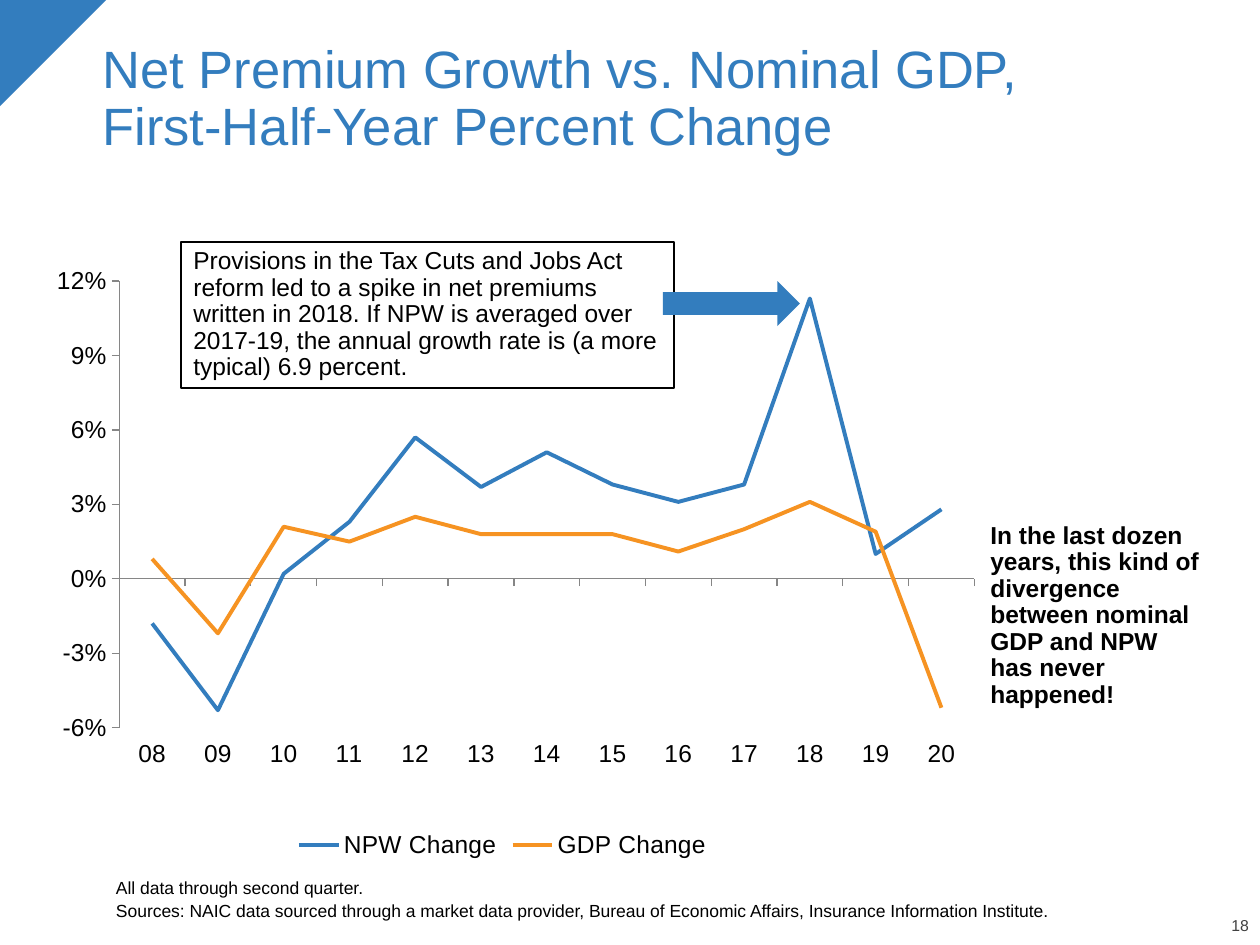
from dataclasses import dataclass

from lxml import etree
from pptx import Presentation
from pptx.chart.data import CategoryChartData
from pptx.dml.color import RGBColor
from pptx.enum.chart import XL_CHART_TYPE, XL_LEGEND_POSITION, XL_TICK_LABEL_POSITION, XL_TICK_MARK
from pptx.enum.shapes import MSO_SHAPE
from pptx.enum.text import MSO_ANCHOR, MSO_AUTO_SIZE, PP_ALIGN
from pptx.oxml import parse_xml
from pptx.oxml.ns import nsdecls, qn
from pptx.util import Pt

EMU_PER_PX = 914400 / 126
LINE = XL_CHART_TYPE.LINE
LEGEND_BOTTOM = XL_LEGEND_POSITION.BOTTOM
LABELS_LOW = XL_TICK_LABEL_POSITION.LOW
TICK_OUTSIDE, TICK_NONE = XL_TICK_MARK.OUTSIDE, XL_TICK_MARK.NONE
TRIANGLE, RIGHT_ARROW = MSO_SHAPE.RIGHT_TRIANGLE, MSO_SHAPE.RIGHT_ARROW
TOP, MIDDLE, BOTTOM = MSO_ANCHOR.TOP, MSO_ANCHOR.MIDDLE, MSO_ANCHOR.BOTTOM
FIXED_SIZE = MSO_AUTO_SIZE.NONE
LEFT, RIGHT = PP_ALIGN.LEFT, PP_ALIGN.RIGHT

YEARS = [f"{year:02}" for year in range(8, 21)]
GROWTH = {
    "NPW Change": [-0.018, -0.053, 0.002, 0.023, 0.057, 0.037, 0.051,
                   0.038, 0.031, 0.038, 0.113, 0.01, 0.028],
    "GDP Change": [0.008, -0.022, 0.021, 0.015, 0.025, 0.018, 0.018,
                   0.018, 0.011, 0.02, 0.031, 0.019, -0.052],
}
PLOT_AREA = {"x": 0.107, "y": 0.063, "w": 0.877, "h": 0.718}


@dataclass(frozen=True)
class Theme:
    font: str = "Arial"
    blue: RGBColor = RGBColor(0x33, 0x7D, 0xBE)
    orange: RGBColor = RGBColor(0xF6, 0x93, 0x22)
    black: RGBColor = RGBColor(0, 0, 0)
    gray: RGBColor = RGBColor(0x40, 0x40, 0x40)
    axis: RGBColor = RGBColor(0x86, 0x86, 0x86)
    title_size: int = 30
    text_size: int = 14
    source_size: int = 10
    number_size: int = 9


def px(*lengths):
    return [round(length * EMU_PER_PX) for length in lengths]


def write(frame, text, *, font, size, color, bold=False, align=LEFT,
          anchor=TOP, gap=0, inset=True):
    frame.word_wrap = True
    frame.auto_size = FIXED_SIZE
    frame.vertical_anchor = anchor
    if not inset:
        frame.margin_left = frame.margin_right = 0
        frame.margin_top = frame.margin_bottom = 0
    for index, line in enumerate(text.split("\n")):
        para = frame.add_paragraph() if index else frame.paragraphs[0]
        properties = para._p.get_or_add_pPr()
        properties.set("marL", "0")
        properties.set("indent", "0")
        etree.SubElement(properties, qn("a:buNone"))
        para.alignment = align
        para.line_spacing = 0.9
        para.space_before = Pt(gap if index else 0)
        span = para.add_run()
        span.text = line
        span.font.name = font
        span.font.size = Pt(size)
        span.font.bold = bold
        span.font.color.rgb = color


class SlideBuilder:
    """Draws styled elements on the current slide."""

    def __init__(self, page, theme):
        self.page = page
        self.theme = theme

    def placeholder(self, index, at, text, **style):
        box = self.page.placeholders[index]
        box.left, box.top, box.width, box.height = px(*at)
        write(box.text_frame, text, font=self.theme.font, **style)

    def text(self, at, text, border=None, **style):
        box = self.page.shapes.add_textbox(*px(*at))
        if border:
            box.line.color.rgb = border
            box.line.width = Pt(1.5)
        write(box.text_frame, text, font=self.theme.font, **style)

    def shape(self, kind, at, rotation=0):
        shape = self.page.shapes.add_shape(kind, *px(*at))
        shape.rotation = rotation
        shape.shadow.inherit = False
        shape.fill.solid()
        shape.fill.fore_color.rgb = self.theme.blue
        shape.line.fill.background()

    def style_axis(self, axis):
        axis.major_tick_mark = TICK_OUTSIDE
        axis.minor_tick_mark = TICK_NONE
        axis.has_major_gridlines = False
        axis.format.line.color.rgb = self.theme.axis
        axis.format.line.width = Pt(0.75)

    def line_chart(self, at, categories, series, colors):
        data = CategoryChartData(number_format="0.0%")
        data.categories = categories
        for name, values in series.items():
            data.add_series(name, values)
        chart = self.page.shapes.add_chart(LINE, *px(*at), data).chart
        chart.has_title = False
        chart.font.name = self.theme.font
        chart.font.size = Pt(self.theme.text_size)
        chart.font.color.rgb = self.theme.black
        chart.has_legend = True
        chart.legend.position = LEGEND_BOTTOM
        chart.legend.include_in_layout = False

        self.style_axis(chart.category_axis)
        chart.category_axis.tick_label_position = LABELS_LOW
        scale = chart.value_axis
        self.style_axis(scale)
        scale.minimum_scale, scale.maximum_scale = -0.06, 0.12
        scale.major_unit = 0.03
        scale.tick_labels.number_format = "0%"
        scale.tick_labels.number_format_is_linked = False

        plot = chart.plots[0]
        plot.vary_by_categories = False
        for line, color in zip(plot.series, colors):
            line.smooth = False
            line.format.line.color.rgb = color
            line.format.line.width = Pt(2.25)
        self.place_plot(chart)

    def place_plot(self, chart):
        sides = "".join(f'<c:{side}Mode val="edge"/>' for side in "xy")
        sizes = "".join(f'<c:{side} val="{value}"/>' for side, value in PLOT_AREA.items())
        area = chart._chartSpace.chart.plotArea
        for layout in area.findall(qn("c:layout")):
            area.remove(layout)
        area.insert(0, parse_xml(
            f'<c:layout {nsdecls("c")}><c:manualLayout><c:layoutTarget val="inner"/>'
            f'{sides}{sizes}</c:manualLayout></c:layout>'))


def main():
    theme = Theme()
    deck = Presentation()
    deck.slide_width, deck.slide_height = px(1260, 945)
    slide = SlideBuilder(deck.slides.add_slide(deck.slide_layouts[1]), theme)

    slide.shape(TRIANGLE, (0, 0, 106, 106), rotation=90)
    slide.text((1188, 918, 61, 17), "18", size=theme.number_size, color=theme.gray,
               align=RIGHT, anchor=BOTTOM, inset=False)
    slide.line_chart((15, 242, 975, 622), YEARS, GROWTH, (theme.blue, theme.orange))
    slide.placeholder(
        0, (90, 32, 1028, 131),
        "Net Premium Growth vs. Nominal GDP, First-Half-Year Percent Change",
        size=theme.title_size, color=theme.blue, anchor=BOTTOM)
    slide.placeholder(
        1, (116, 864, 1118, 57),
        "All data through second quarter.\n"
        "Sources: NAIC data sourced through a market data provider, "
        "Bureau of Economic Affairs, Insurance Information Institute.",
        size=theme.source_size, color=theme.black, anchor=BOTTOM, gap=2, inset=False)
    slide.text(
        (978, 516, 241, 200),
        "In the last dozen years, this kind of divergence between nominal "
        "GDP and NPW has never happened!",
        size=theme.text_size, color=theme.black, bold=True, anchor=MIDDLE)
    slide.text(
        (181, 242, 493, 146),
        "Provisions in the Tax Cuts and Jobs Act reform led to a spike in net "
        "premiums written in 2018. If NPW is averaged over 2017-19, the annual "
        "growth rate is (a more typical) 6.9 percent.",
        border=theme.black, size=theme.text_size, color=theme.black, anchor=MIDDLE)
    slide.shape(RIGHT_ARROW, (663, 281, 137, 45))
    deck.save("out.pptx")


if __name__ == "__main__":
    main()
